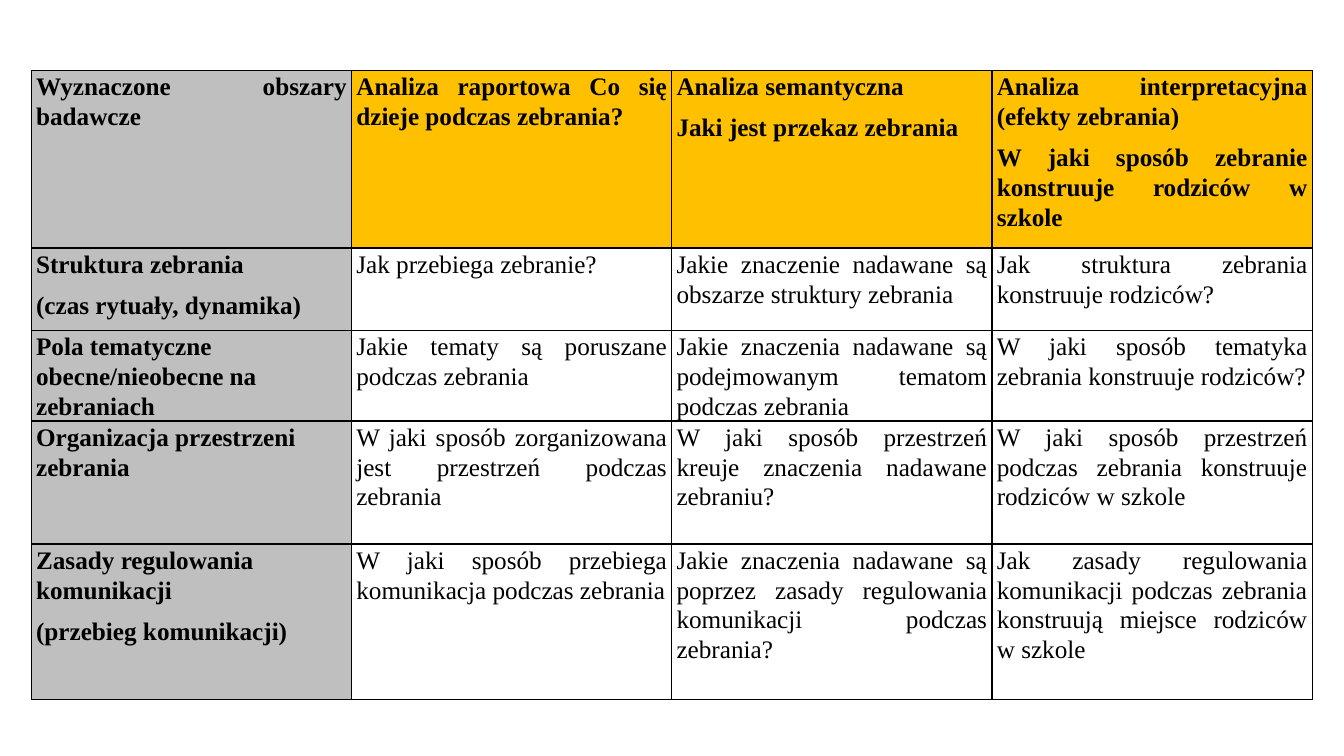
"""Builds a slide with a table of research areas and three levels of meeting analysis."""
from dataclasses import dataclass

from lxml import etree
from pptx import Presentation
from pptx import util as u
from pptx.dml.color import RGBColor
from pptx.enum import text
from pptx.oxml import ns
from pptx.table import _Cell

BLACK = RGBColor(0x00, 0x00, 0x00)
WHITE = RGBColor(0xFF, 0xFF, 0xFF)
GREY = RGBColor(0xBF, 0xBF, 0xBF)
AMBER = RGBColor(0xFF, 0xC0, 0x00)
FONT = "Times New Roman"
COL_WIDTH = 8.07


@dataclass(frozen=True)
class AreaRow:
    height: float
    area: tuple[str, ...]
    analyses: tuple[tuple[str, ...], ...]


HEADER = AreaRow(4.47, ("Wyznaczone obszary badawcze",), (
    ("Analiza raportowa Co się dzieje podczas zebrania?",),
    ("Analiza semantyczna", "Jaki jest przekaz zebrania"),
    ("Analiza interpretacyjna (efekty zebrania)",
     "W jaki sposób zebranie konstruuje rodziców w szkole"),
))
AREAS = (
    AreaRow(2.08, ("Struktura zebrania", "(czas rytuały, dynamika)"), (
        ("Jak przebiega zebranie?",),
        ("Jakie znaczenie nadawane są obszarze struktury zebrania",),
        ("Jak struktura zebrania konstruuje rodziców?",),
    )),
    AreaRow(2.26, ("Pola tematyczne obecne/nieobecne na zebraniach",), (
        ("Jakie tematy są poruszane podczas zebrania",),
        ("Jakie znaczenia nadawane są podejmowanym tematom podczas zebrania",),
        ("W jaki sposób tematyka zebrania konstruuje rodziców?",),
    )),
    AreaRow(3.1, ("Organizacja przestrzeni zebrania",), (
        ("W jaki sposób zorganizowana jest przestrzeń podczas zebrania",),
        ("W jaki sposób przestrzeń kreuje znaczenia nadawane zebraniu?",),
        ("W jaki sposób przestrzeń podczas zebrania konstruuje rodziców w szkole",),
    )),
    AreaRow(3.92, ("Zasady regulowania komunikacji", "(przebieg komunikacji)"), (
        ("W jaki sposób przebiega komunikacja podczas zebrania",),
        ("Jakie znaczenia nadawane są poprzez zasady regulowania komunikacji "
         "podczas zebrania?",),
        ("Jak zasady regulowania komunikacji podczas zebrania konstruują "
         "miejsce rodziców w szkole",),
    )),
)


def add_borders(cell: _Cell) -> None:
    tc_pr = cell._tc.get_or_add_tcPr()
    for i, side in enumerate(("lnL", "lnR", "lnT", "lnB")):
        ln = etree.Element(ns.qn(f"a:{side}"), w=str(u.Pt(1)))
        fill = etree.SubElement(ln, ns.qn("a:solidFill"))
        etree.SubElement(fill, ns.qn("a:srgbClr"), val=str(BLACK))
        tc_pr.insert(i, ln)


def fill_cell(cell: _Cell, lines: tuple[str, ...], color: RGBColor,
              bold: bool, justified: bool) -> None:
    cell.fill.solid()
    cell.fill.fore_color.rgb = color
    cell.margin_left = cell.margin_right = u.Cm(0.12)
    cell.margin_top, cell.margin_bottom = u.Cm(0.02), u.Cm(0)
    add_borders(cell)
    tf = cell.text_frame
    tf.text = "\n".join(lines)
    for p in tf.paragraphs:
        p.alignment = text.PP_ALIGN.JUSTIFY if justified else text.PP_ALIGN.LEFT
        p.line_spacing = 1.07
        p.space_after = u.Pt(8)
        p.font.name, p.font.size, p.font.bold = FONT, u.Pt(18), bold
        p.font.color.rgb = BLACK


def main() -> None:
    prs = Presentation()
    prs.slide_width, prs.slide_height = u.Cm(33.87), u.Cm(19.05)
    s = prs.slides.add_slide(prs.slide_layouts[6])
    rows = (HEADER, *AREAS)
    cols = 1 + len(HEADER.analyses)
    table = s.shapes.add_table(
        len(rows), cols, u.Cm(0.79), u.Cm(1.78),
        u.Cm(cols * COL_WIDTH), u.Cm(sum(row.height for row in rows))).table
    for column in table.columns:
        column.width = u.Cm(COL_WIDTH)
    for i, row in enumerate(rows):
        header = row is HEADER
        table.rows[i].height = u.Cm(row.height)
        fill_cell(table.cell(i, 0), row.area, GREY, True, header)
        for j, lines in enumerate(row.analyses, start=1):
            fill_cell(table.cell(i, j), lines, AMBER if header else WHITE, header, True)
    prs.save("out.pptx")


if __name__ == "__main__":
    main()
